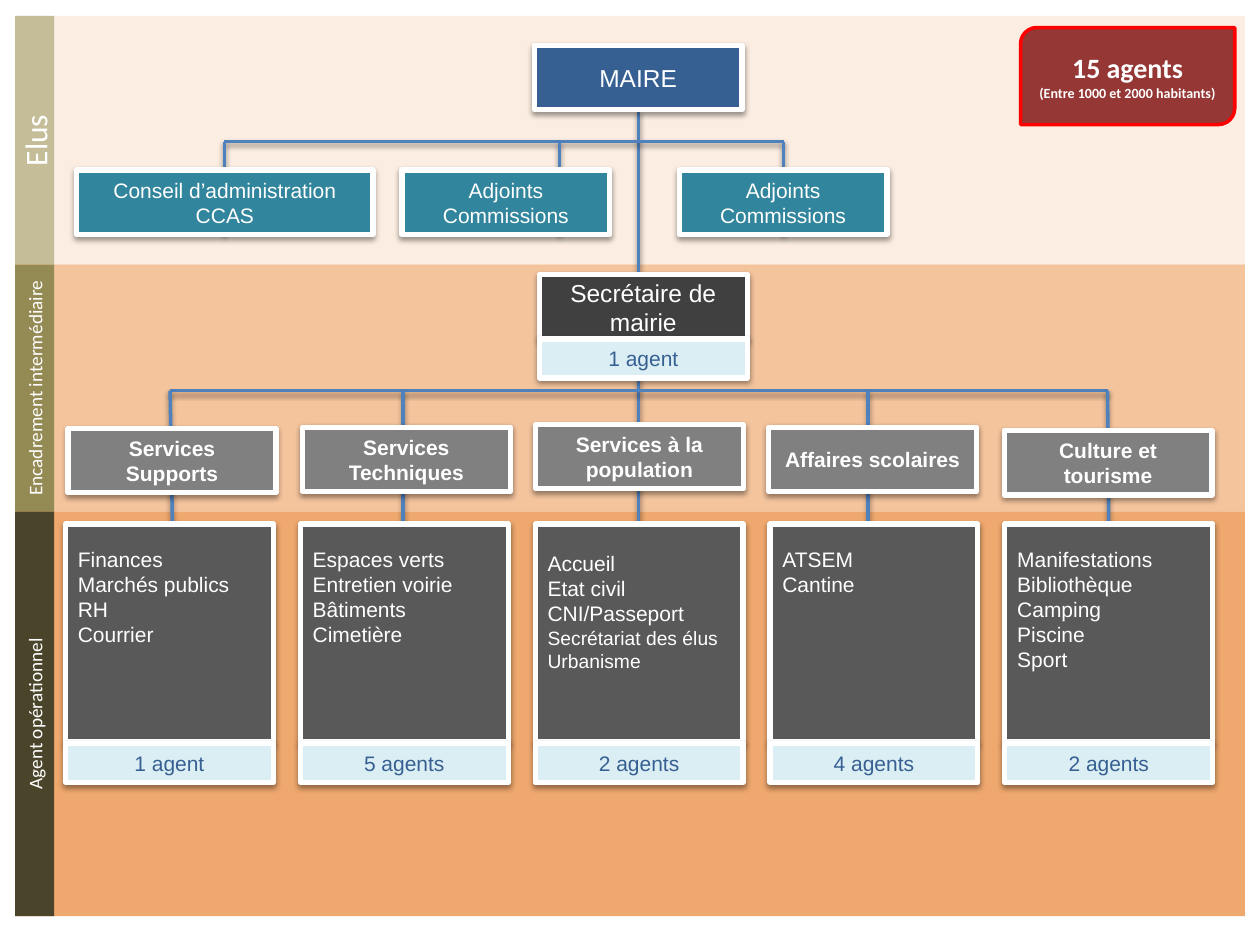
from dataclasses import dataclass
from typing import NamedTuple

from lxml import etree
from pptx import Presentation
from pptx.dml.color import RGBColor
from pptx.enum.shapes import MSO_CONNECTOR, MSO_SHAPE
from pptx.enum.text import MSO_ANCHOR, PP_ALIGN
from pptx.oxml.ns import qn
from pptx.util import Pt

RECT = MSO_SHAPE.RECTANGLE
BADGE = MSO_SHAPE.ROUND_2_DIAG_RECTANGLE
STRAIGHT = MSO_CONNECTOR.STRAIGHT
TOP, MIDDLE = MSO_ANCHOR.TOP, MSO_ANCHOR.MIDDLE
LEFT, CENTER = PP_ALIGN.LEFT, PP_ALIGN.CENTER


@dataclass(frozen=True)
class Theme:
    body: str = "Arial"
    label: str = "Calibri"
    white: str = "FFFFFF"
    band: str = "E46C0A"
    link: str = "4F81BD"
    mayor: str = "376092"
    elected: str = "31859C"
    secretary: str = "404040"
    service: str = "808080"
    duties: str = "595959"
    staff: str = "DBEEF4"
    badge: str = "953735"
    badge_line: str = "FF0000"
    shadow: str = "000000"
    lead_size: float = 14
    text_size: float = 12
    small_size: float = 11
    strip_size: float = 18
    badge_size: float = 16
    note_size: float = 8
    border: float = 3
    stroke: float = 2


class Box(NamedTuple):
    x: float
    y: float
    w: float
    h: float


class Style(NamedTuple):
    fill: str
    size: float
    color: str = "FFFFFF"
    font: str = "Arial"
    bold: bool = False
    line: str | None = "FFFFFF"
    width: float = 3
    shadow: bool = True
    align: PP_ALIGN = CENTER


class Band(NamedTuple):
    name: str
    y: float
    h: float
    opacity: int
    strip: str
    size: float


class Service(NamedTuple):
    name: str
    x: float
    y: float
    link_top: float
    link_foot: float
    duties: str
    inset: float
    staff: str


T = Theme()
MAYOR = Style(T.mayor, T.lead_size)
ELECTED = Style(T.elected, T.text_size)
SECRETARY = Style(T.secretary, T.lead_size)
SERVICE = Style(T.service, T.text_size, bold=True)
DUTIES = Style(T.duties, T.text_size, align=LEFT)
STAFF = Style(T.staff, T.text_size, T.mayor)
BADGE_STYLE = Style(T.badge, T.badge_size, font=T.label, bold=True,
                    line=T.badge_line, width=T.stroke, shadow=False)

BAND_X, BAND_W, STRIP_W = 8.7, 702.7, 22.3
CARD_W, CARD_H, STAFF_H = 118.8, 36.7, 22.3
COLUMN_X, COLUMN_STEP = 37.4, 134.2
DUTIES_Y, DUTIES_H, STAFF_Y = 299.5, 124.6, 424.8
ELECTED_Y, ELECTED_BUS_Y, SERVICE_BUS_Y = 97.2, 81, 223.2
MAIN_X, SECRETARY_X, SECRETARY_Y = 365, 308.2, 157

BANDS = [
    Band("Elus", 9.1, 142.4, 12, "C4BD97", T.strip_size),
    Band("Encadrement intermédiaire", 151.3, 141.1, 40, "948A54", T.small_size),
    Band("Agent opérationnel", 292.4, 231.1, 59, "4A452A", T.small_size),
]
ELECTED_GROUPS = [
    ("Conseil d’administration\nCCAS", 43.9, 169.2, 128.2),
    ("Adjoints\nCommissions", 229.7, CARD_W, 319.7),
    ("Adjoints\nCommissions", 388.1, CARD_W, 447.8),
]
SERVICES = [
    Service("Services Supports", 38.9, 244.8, 97.2, 98.6,
            "Finances\nMarchés publics\nRH\nCourrier", 12.6, "1 agent"),
    Service("Services Techniques", 172.8, 244.1, 230.4, 230.4,
            "Espaces verts\nEntretien voirie\nBâtiments\nCimetière", 12.6, "5 agents"),
    Service("Services à la population", 306, 242.6, MAIN_X, MAIN_X,
            "Accueil\nEtat civil\nCNI/Passeport\nSecrétariat des élus\nUrbanisme",
            15, "2 agents"),
    Service("Affaires scolaires", 439.2, 244.1, 496.1, 496.1,
            "ATSEM\nCantine", 12.6, "4 agents"),
    Service("Culture et tourisme", 573.8, 246.2, 632.9, 633.6,
            "Manifestations Bibliothèque\nCamping\nPiscine\nSport", 12.6, "2 agents"),
]
SMALL_DUTIES = {"Secrétariat des élus", "Urbanisme"}


def add_color(parent, color: str, opacity: int) -> None:
    clr = etree.SubElement(parent, qn("a:srgbClr"), val=color)
    etree.SubElement(clr, qn("a:alpha"), val=str(opacity * 1000))


def add_shadow(effects) -> None:
    shadow = etree.SubElement(
        effects, qn("a:outerShdw"), blurRad=str(Pt(3.1)), dist=str(Pt(1.6)),
        dir="5400000", rotWithShape="0")
    add_color(shadow, T.shadow, 38)


def add_box(s, box: Box, text: str, style: Style, kind=RECT):
    sp = s.shapes.add_shape(kind, *map(Pt, box))
    sp.shadow.inherit = False
    sp.fill.solid()
    sp.fill.fore_color.rgb = RGBColor.from_string(style.fill)
    if style.line:
        sp.line.color.rgb = RGBColor.from_string(style.line)
        sp.line.width = Pt(style.width)
    else:
        sp.line.fill.background()
    if style.shadow:
        add_shadow(sp._element.spPr.find(qn("a:effectLst")))
    tf = sp.text_frame
    tf.word_wrap = True
    tf.vertical_anchor = MIDDLE
    tf.text = text
    for p in tf.paragraphs:
        p.alignment = style.align
        for r in p.runs:
            r.font.name = style.font
            r.font.size = Pt(style.size)
            r.font.bold = style.bold
            r.font.color.rgb = RGBColor.from_string(style.color)
    return sp


def add_link(s, x1: float, y1: float, x2: float, y2: float) -> None:
    link = s.shapes.add_connector(STRAIGHT, Pt(x1), Pt(y1), Pt(x2), Pt(y2))
    link.line.color.rgb = RGBColor.from_string(T.link)
    link.line.width = Pt(T.stroke)
    add_shadow(etree.SubElement(link._element.spPr, qn("a:effectLst")))


def add_band(s, band: Band) -> None:
    flat = Style(T.band, band.size, font=T.label, line=None, shadow=False)
    sp = add_box(s, Box(BAND_X, band.y, BAND_W, band.h), "", flat)
    fill = sp._element.spPr.find(qn("a:solidFill"))
    fill.remove(fill[0])
    add_color(fill, T.band, band.opacity)
    strip = Box(BAND_X + (STRIP_W - band.h) / 2,
                band.y + (band.h - STRIP_W) / 2, band.h, STRIP_W)
    add_box(s, strip, band.name, flat._replace(fill=band.strip)).rotation = 270


def add_links(s) -> None:
    add_link(s, MAIN_X, 63.4, MAIN_X, 309.6)
    xs = [x for *_, x in ELECTED_GROUPS]
    add_link(s, xs[0], ELECTED_BUS_Y, xs[-1], ELECTED_BUS_Y)
    for x in xs:
        add_link(s, x, ELECTED_BUS_Y, x, ELECTED_Y + CARD_H)
    add_link(s, SERVICES[0].link_top, SERVICE_BUS_Y,
             SERVICES[-1].link_top, SERVICE_BUS_Y)
    for sv in SERVICES:
        if sv.link_top != MAIN_X:
            add_link(s, sv.link_top, SERVICE_BUS_Y, sv.link_foot, 303)


def add_service(s, sv: Service, column: int) -> None:
    x = COLUMN_X + column * COLUMN_STEP
    add_box(s, Box(sv.x, sv.y, CARD_W, CARD_H), sv.name, SERVICE)
    tf = add_box(s, Box(x, DUTIES_Y, CARD_W, DUTIES_H), sv.duties, DUTIES).text_frame
    tf.vertical_anchor = TOP
    tf.margin_top = Pt(sv.inset)
    for p in tf.paragraphs:
        if p.text in SMALL_DUTIES:
            p.runs[0].font.size = Pt(T.small_size)
    add_box(s, Box(x, STAFF_Y, CARD_W, STAFF_H), sv.staff, STAFF)


def main() -> None:
    prs = Presentation()
    prs.slide_width, prs.slide_height = Pt(720), Pt(540)
    s = prs.slides.add_slide(prs.slide_layouts[6])
    for band in BANDS:
        add_band(s, band)
    add_links(s)
    add_box(s, Box(305.3, 26, CARD_W, CARD_H), "MAIRE", MAYOR)
    for name, x, w, _ in ELECTED_GROUPS:
        add_box(s, Box(x, ELECTED_Y, w, CARD_H), name, ELECTED)
    add_box(s, Box(SECRETARY_X, SECRETARY_Y, CARD_W, CARD_H),
            "Secrétaire de mairie", SECRETARY)
    add_box(s, Box(SECRETARY_X, SECRETARY_Y + CARD_H, CARD_W, STAFF_H),
            "1 agent", STAFF)
    for column, sv in enumerate(SERVICES):
        add_service(s, sv, column)
    badge = add_box(s, Box(583.2, 15.8, 122.4, 55.4),
                    "15 agents\n(Entre 1000 et 2000 habitants)", BADGE_STYLE, BADGE)
    badge.text_frame.paragraphs[1].runs[0].font.size = Pt(T.note_size)
    prs.save("out.pptx")


if __name__ == "__main__":
    main()
